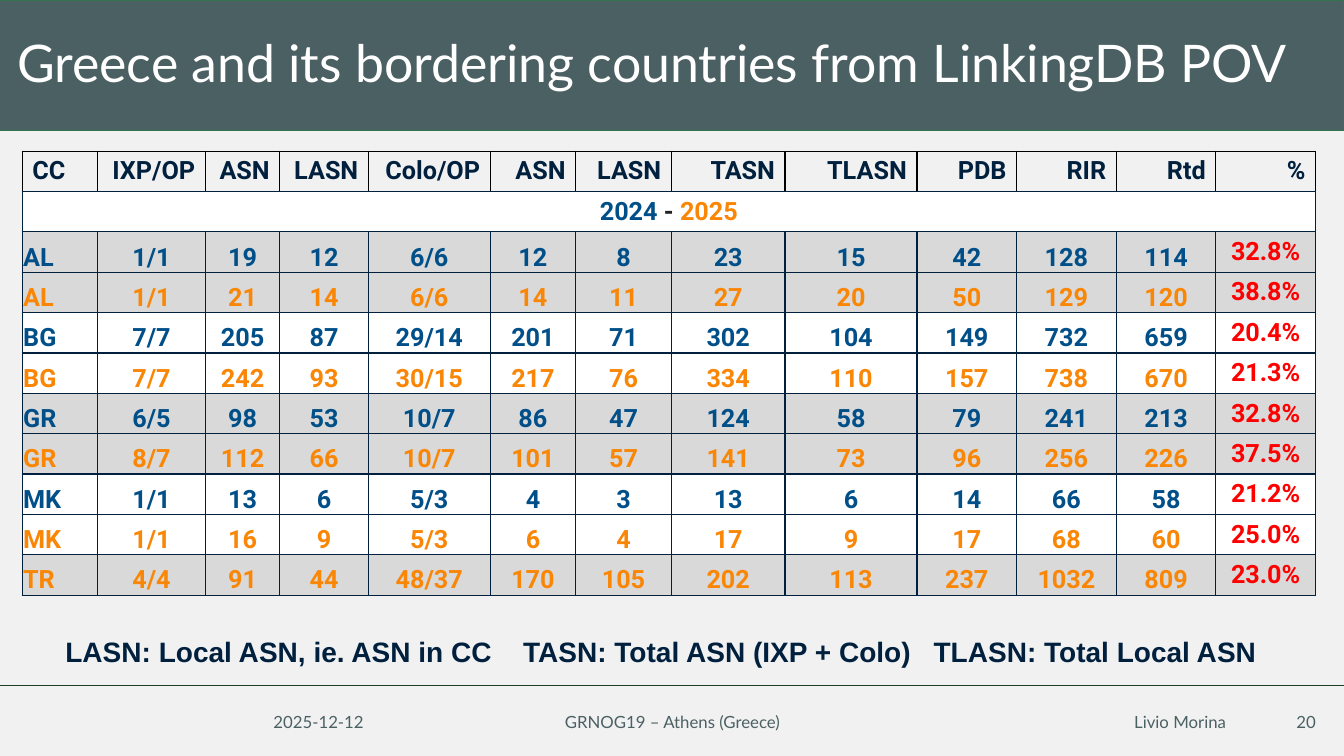
from lxml import etree
from pptx import Presentation, util as u
from pptx.dml.color import RGBColor
from pptx.enum import shapes, text
from pptx.oxml.ns import qn

NAVY, SLATE, WHITE, RED = "00203E", "4B6063", "FFFFFF", "FF0000"
YEAR_COLOURS = {"2024": "004F88", "2025": "FA8606"}
SHADED_COUNTRIES = {"AL", "GR", "TR"}
LEFT, CENTER, RIGHT = text.PP_ALIGN.LEFT, text.PP_ALIGN.CENTER, text.PP_ALIGN.RIGHT
TOP, MIDDLE, BOTTOM = text.MSO_ANCHOR.TOP, text.MSO_ANCHOR.MIDDLE, text.MSO_ANCHOR.BOTTOM

HEADINGS = "CC IXP/OP ASN LASN Colo/OP ASN LASN TASN TLASN PDB RIR Rtd %".split()
COLUMN_WEIGHTS = [0.75, 1.07, 0.74, 0.88, 1.21, 0.85, 0.95, 1.13, 1.31] + [0.99] * 4
COUNTRY_ROWS = [
    ("2024", "AL 1/1 19 12 6/6 12 8 23 15 42 128 114 32.8%"),
    ("2025", "AL 1/1 21 14 6/6 14 11 27 20 50 129 120 38.8%"),
    ("2024", "BG 7/7 205 87 29/14 201 71 302 104 149 732 659 20.4%"),
    ("2025", "BG 7/7 242 93 30/15 217 76 334 110 157 738 670 21.3%"),
    ("2024", "GR 6/5 98 53 10/7 86 47 124 58 79 241 213 32.8%"),
    ("2025", "GR 8/7 112 66 10/7 101 57 141 73 96 256 226 37.5%"),
    ("2024", "MK 1/1 13 6 5/3 4 3 13 6 14 66 58 21.2%"),
    ("2025", "MK 1/1 16 9 5/3 6 4 17 9 17 68 60 25.0%"),
    ("2025", "TR 4/4 91 44 48/37 170 105 202 113 237 1032 809 23.0%"),
]
# left and width in percent of the slide, wording, alignment
FOOTERS = [
    (18.08, 11.25, "2025-12-12", CENTER),
    (33.16, 33.76, "GRNOG19 – Athens (Greece)", CENTER),
    (77.34, 20.93, "Livio Morina", CENTER),
    (76.14, 22.51, "20", RIGHT),
]


def colour(hex_string):
    return RGBColor.from_string(hex_string)


def write(frame, runs, size=18, font="Roboto", ink=NAVY, bold=False,
          align=LEFT, spacing=None, tabs=()):
    """Fill the first paragraph; runs is a string or a list of (wording, colour)."""
    paragraph = frame.paragraphs[0]
    if tabs:
        tab_list = etree.SubElement(paragraph._p.get_or_add_pPr(), qn("a:tabLst"))
        for position in tabs:
            etree.SubElement(tab_list, qn("a:tab"), pos=str(int(position)), algn="l")
    paragraph.alignment = align
    if spacing:
        paragraph.line_spacing = spacing
    for wording, run_ink in [(runs, ink)] if isinstance(runs, str) else runs:
        run = paragraph.add_run()
        run.text = wording
        run.font.name, run.font.size, run.font.bold = font, u.Pt(size), bold
        run.font.color.rgb = colour(run_ink)


def set_borders(cell, ink, points=1):
    properties = cell._tc.get_or_add_tcPr()
    for order, side in enumerate(("lnL", "lnR", "lnT", "lnB")):
        line = etree.Element(qn("a:" + side), w=str(u.Pt(points)))
        fill = etree.SubElement(line, qn("a:solidFill"))
        etree.SubElement(fill, qn("a:srgbClr"), val=ink)
        properties.insert(order, line)


class Page:
    """One slide; all places and sizes are percentages of its width and height."""

    def __init__(self, deck, background):
        self.deck = deck
        self.slide = deck.slides.add_slide(deck.slide_layouts[6])
        self.slide.background.fill.solid()
        self.slide.background.fill.fore_color.rgb = colour(background)

    def x(self, share):
        return int(self.deck.slide_width * share / 100)

    def y(self, share):
        return int(self.deck.slide_height * share / 100)

    def box(self, left, top, width, height):
        return self.x(left), self.y(top), self.x(width), self.y(height)

    def band(self, *place, fill, line):
        band = self.slide.shapes.add_shape(shapes.MSO_SHAPE.RECTANGLE, *self.box(*place))
        band.shadow.inherit = False
        band.fill.solid()
        band.fill.fore_color.rgb = colour(fill)
        band.line.color.rgb = colour(line)
        band.line.width = u.Pt(0.75)

    def rule(self, height, ink):
        rule = self.slide.shapes.add_connector(
            shapes.MSO_CONNECTOR.STRAIGHT, 0, self.y(height), self.x(100), self.y(height))
        rule.line.color.rgb = colour(ink)
        rule.line.width = u.Pt(1)
        etree.SubElement(rule._element.spPr, qn("a:effectLst"))

    def label(self, *place, wording, anchor=MIDDLE, **style):
        frame = self.slide.shapes.add_textbox(*self.box(*place)).text_frame
        frame.word_wrap = True
        frame.vertical_anchor = anchor
        write(frame, wording, **style)

    def table(self, *place, rows, weights):
        left, top, width, height = self.box(*place)
        table = self.slide.shapes.add_table(
            rows, len(weights), left, top, width, height).table
        table.first_row = table.horz_banding = False
        for column, weight in zip(table.columns, weights):
            column.width = int(width * weight / sum(weights))
        return table

    def cell(self, cell, wording, fill=None, line=NAVY, anchor=MIDDLE, tight=False, **style):
        if fill:
            cell.fill.solid()
            cell.fill.fore_color.rgb = colour(fill)
        else:
            cell.fill.background()
        set_borders(cell, line)
        cell.vertical_anchor = anchor
        if tight:
            cell.margin_left = cell.margin_right = cell.margin_top = u.Inches(0.01)
            cell.margin_bottom = 0
        write(cell.text_frame, wording, bold=True, **style)


def add_peering_table(page):
    table = page.table(1.65, 20, 96.25, 58.67,
                       rows=len(COUNTRY_ROWS) + 2, weights=COLUMN_WEIGHTS)
    for column, heading in enumerate(HEADINGS):
        page.cell(table.cell(0, column), heading, line="000000",
                  align=RIGHT if column else LEFT)

    last = len(HEADINGS) - 1
    years = table.cell(1, 0)
    years.merge(table.cell(1, last))
    page.cell(years, [("2024 ", YEAR_COLOURS["2024"]), ("- ", "212121"),
                      ("2025", YEAR_COLOURS["2025"])],
              fill=WHITE, tight=True, align=CENTER)
    for column in range(1, last + 1):
        set_borders(table.cell(1, column), NAVY)

    for row, (year, figures) in enumerate(COUNTRY_ROWS, start=2):
        figures = figures.split()
        shade = "D9D9D9" if figures[0] in SHADED_COUNTRIES else WHITE
        for column, figure in enumerate(figures):
            is_percent = column == last
            page.cell(table.cell(row, column), figure, fill=shade,
                      anchor=MIDDLE if is_percent else BOTTOM, tight=not is_percent,
                      ink=RED if is_percent else YEAR_COLOURS[year],
                      align=CENTER if column else LEFT)


def main():
    deck = Presentation()
    deck.slide_width, deck.slide_height = u.Inches(13.33), u.Inches(7.5)
    page = Page(deck, "F1F1F1")
    page.band(0, 0, 100, 17.33, fill=SLATE, line="33744A")
    page.rule(90.67, "1C3F28")
    page.label(0.53, 1.33, 99.47, 14.67, size=37, font="Lato", ink=WHITE, spacing=0.9,
               wording="Greece and its bordering countries from LinkingDB POV")
    page.label(4.13, 83.33, 94.3, 5.87, anchor=TOP, size=20, font="Arial", bold=True,
               tabs=(page.x(34.05), page.x(64.6)),
               wording="LASN: Local ASN, ie. ASN in CC\tTASN: Total ASN (IXP + Colo)"
                       "\tTLASN: Total Local ASN")
    add_peering_table(page)
    for left, width, wording, align in FOOTERS:
        page.label(left, 92.8, width, 5.33, wording=wording, align=align,
                   size=12, font="Lato", ink=SLATE)
    deck.save("out.pptx")


if __name__ == "__main__":
    main()
